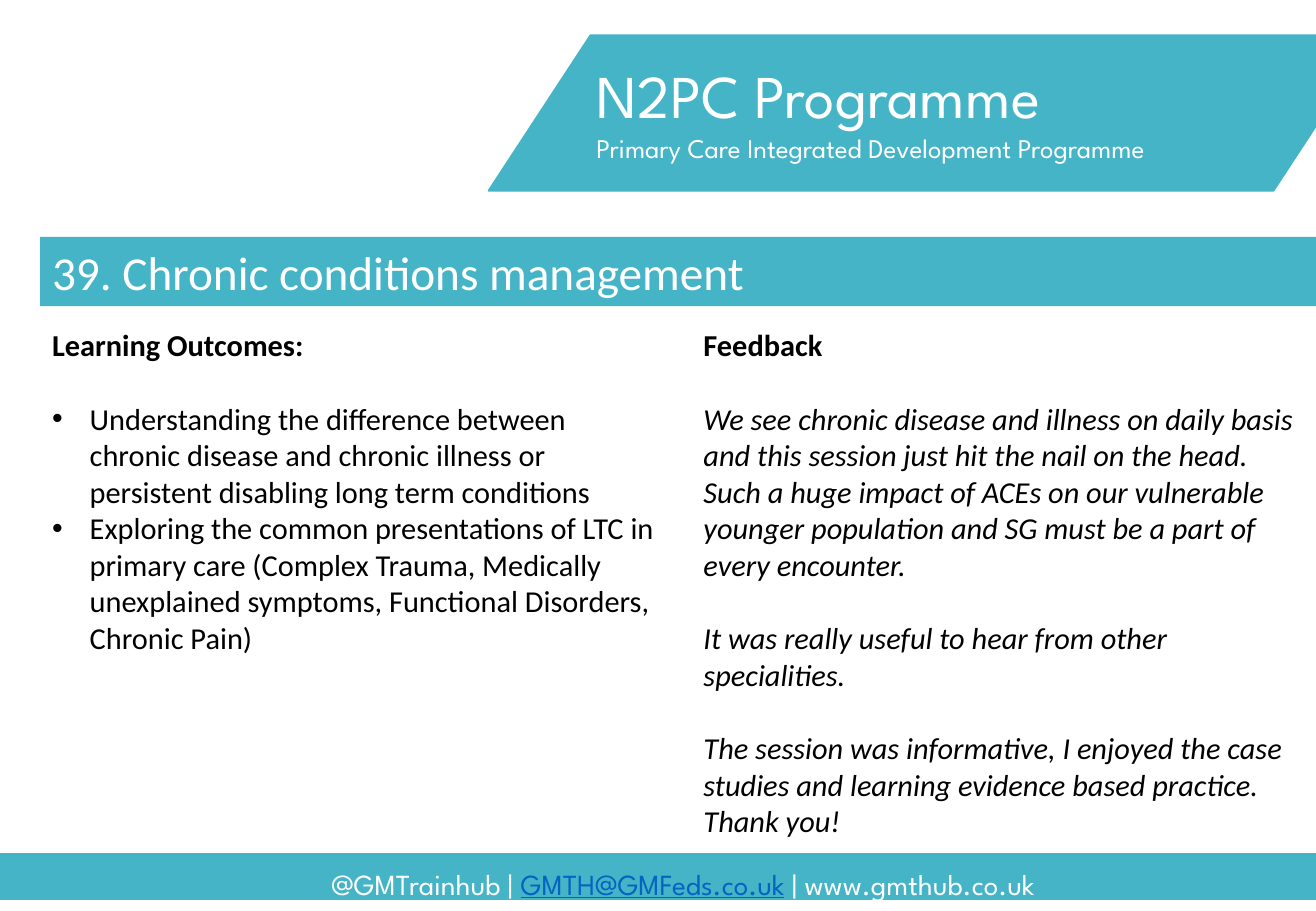
from lxml import etree
from pptx import Presentation
from pptx import util as u
from pptx.dml import color
from pptx.enum import shapes, text
from pptx.oxml import ns

SLIDE_W, SLIDE_H = 10.83, 7.5
TEAL, WHITE, BLACK, LINK = "45B4C6", "FFFFFF", "000000", "0563C1"
BRAND_FONT, BODY_FONT = "League Spartan", "Calibri"

# Horizontal grid, in percent of the slide's width
MARGIN, COLUMN, GUTTER = 3.05, 47.65, 1.85
BLEED = 104.52  # right edge of the parts that run past the slide
BLANK_LINE = 22  # points between separated paragraphs

OUTCOMES = [
    "Understanding the difference between chronic disease and chronic illness or "
    "persistent disabling long term conditions",
    "Exploring the common presentations of LTC in primary care (Complex Trauma, "
    "Medically unexplained symptoms, Functional Disorders, Chronic Pain)",
]
# Each remark with the space before it
FEEDBACK = [
    ("We see chronic disease and illness on daily basis and this session just hit "
     "the nail on the head. Such a huge impact of ACEs on our vulnerable younger "
     "population and SG must be a part of every encounter.", BLANK_LINE),
    ("It was really useful to hear from other specialities.", BLANK_LINE),
    ("The session was informative, I enjoyed the case studies and learning "
     "evidence based practice.", BLANK_LINE),
    ("Thank you!", 0),
]


def rgb(hex_code):
    return color.RGBColor.from_string(hex_code)


def area(left, top, width, height):
    """Turn percentages of the slide into a position and size."""
    return (u.Inches(SLIDE_W * left / 100), u.Inches(SLIDE_H * top / 100),
            u.Inches(SLIDE_W * width / 100), u.Inches(SLIDE_H * height / 100))


def add_block(slide, preset, place, fill, outlined=False):
    block = slide.shapes.add_shape(preset, *area(*place))
    block.shadow.inherit = False
    block.fill.solid()
    block.fill.fore_color.rgb = rgb(fill)
    if outlined:
        block.line.color.rgb = rgb(fill)
        block.line.width = u.Pt(1)
    else:
        block.line.fill.background()
    block.text_frame.word_wrap = True
    block.text_frame.vertical_anchor = text.MSO_ANCHOR.TOP
    return block


def add_label(slide, place):
    label = slide.shapes.add_textbox(*area(*place))
    label.text_frame.word_wrap = True
    return label.text_frame


def add_bullet(paragraph):
    properties = paragraph._p.get_or_add_pPr()
    properties.set("marL", str(u.Inches(0.31)))
    properties.set("indent", str(-u.Inches(0.31)))
    etree.SubElement(properties, ns.qn("a:buFont")).set("typeface", "Arial")
    etree.SubElement(properties, ns.qn("a:buChar")).set("char", "•")


def style(paragraph, font, size, hex_code, bold=False, italic=False):
    paragraph.font.name = font
    paragraph.font.size = u.Pt(size)
    paragraph.font.color.rgb = rgb(hex_code)
    paragraph.font.bold = bold
    paragraph.font.italic = italic


def write(frame, words, font, size, hex_code, first=False, gap=0,
          bullet=False, **emphasis):
    paragraph = frame.paragraphs[0] if first else frame.add_paragraph()
    paragraph.text = words
    paragraph.alignment = text.PP_ALIGN.LEFT
    if gap:
        paragraph.space_before = u.Pt(gap)
    if bullet:
        add_bullet(paragraph)
    style(paragraph, font, size, hex_code, **emphasis)


def add_panel(slide, column, heading):
    left = MARGIN + column * (COLUMN + GUTTER)
    panel = add_block(slide, shapes.MSO_SHAPE.RECTANGLE,
                      (left, 35.2, COLUMN, 57.87), WHITE)
    write(panel.text_frame, heading, BODY_FONT, 18, BLACK, first=True, bold=True)
    return panel.text_frame


def add_footer(slide):
    add_block(slide, shapes.MSO_SHAPE.RECTANGLE, (0, 93.73, BLEED, 4.93),
              TEAL, outlined=True)
    contacts = add_label(slide, (0, 92.53, 103.8, 6.67)).paragraphs[0]
    contacts.alignment = text.PP_ALIGN.CENTER
    contacts.line_spacing = 1.5
    style(contacts, BRAND_FONT, 17.3, WHITE)
    for words in ("@GMTrainhub | ", "GMTH@GMFeds.co.uk", " | www.gmthub.co.uk"):
        contact = contacts.add_run()
        contact.text = words
    email = contacts.runs[1]
    email.font.color.rgb = rgb(LINK)
    email.font.underline = True


def add_header(slide):
    flag = add_block(slide, shapes.MSO_SHAPE.PARALLELOGRAM,
                     (37.12, 3.87, BLEED - 37.12, 17.07), TEAL, outlined=True)
    flag.adjustments[0] = 0.655
    programme = add_label(slide, (44.41, 5.73, 52.17, 13.47))
    write(programme, "N2PC Programme", BRAND_FONT, 36, WHITE, first=True)
    write(programme, "Primary Care Integrated Development Programme",
          BRAND_FONT, 16, WHITE)


def main():
    deck = Presentation()
    deck.slide_width, deck.slide_height = u.Inches(SLIDE_W), u.Inches(SLIDE_H)
    slide = deck.slides.add_slide(deck.slide_layouts[6])

    add_footer(slide)
    add_header(slide)

    # Two columns of content
    outcomes = add_panel(slide, 0, "Learning Outcomes:")
    for index, outcome in enumerate(OUTCOMES):
        write(outcomes, outcome, BODY_FONT, 18, BLACK, bullet=True,
              gap=0 if index else BLANK_LINE)
    feedback = add_panel(slide, 1, "Feedback")
    for remark, gap in FEEDBACK:
        write(feedback, remark, BODY_FONT, 18, BLACK, gap=gap, italic=True)

    # Session title across both columns
    session = add_block(slide, shapes.MSO_SHAPE.RECTANGLE,
                        (MARGIN, 26, 2 * COLUMN + GUTTER, 7.6), TEAL)
    write(session.text_frame, "39. Chronic conditions management",
          BODY_FONT, 28, WHITE, first=True)

    deck.save("out.pptx")


if __name__ == "__main__":
    main()
